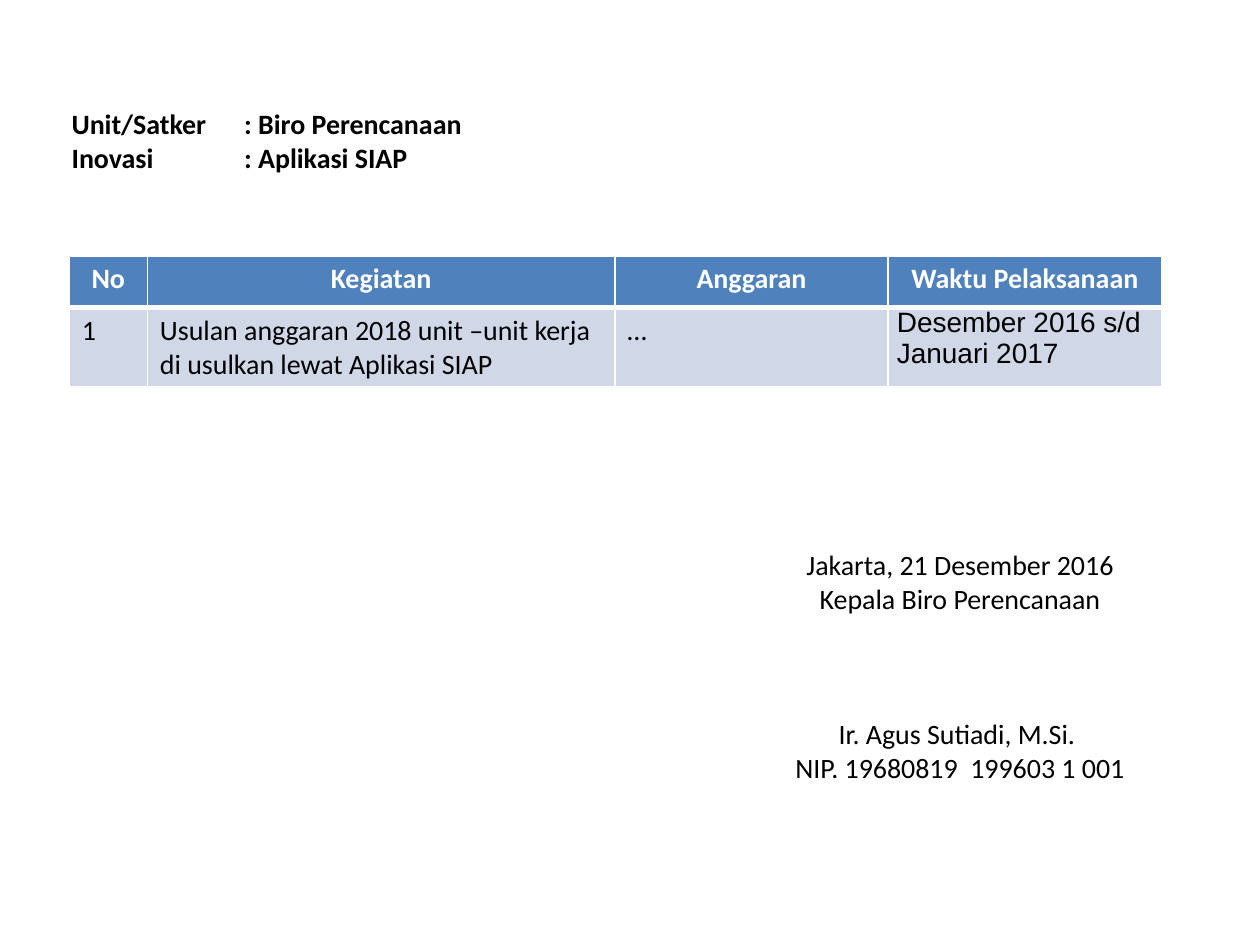
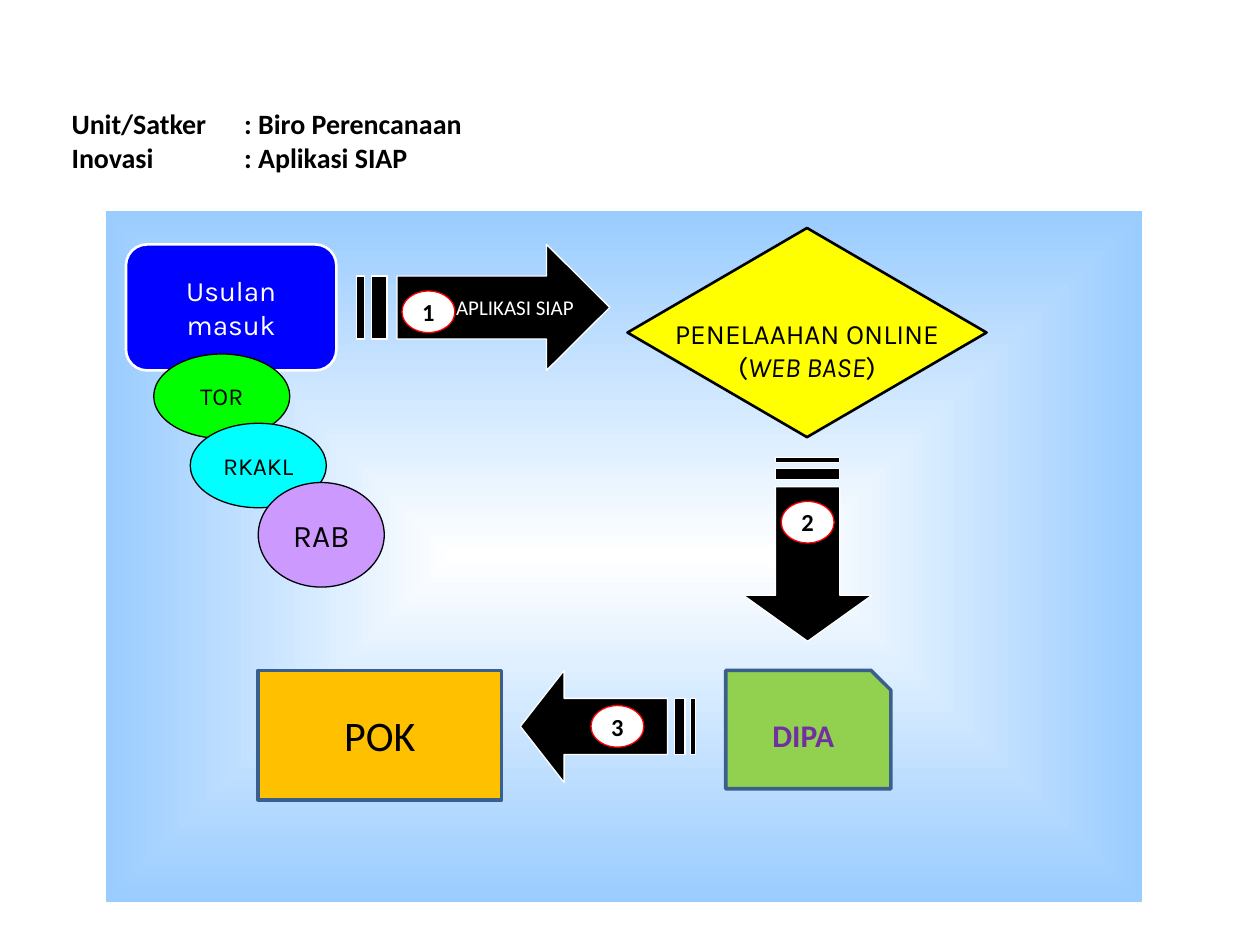
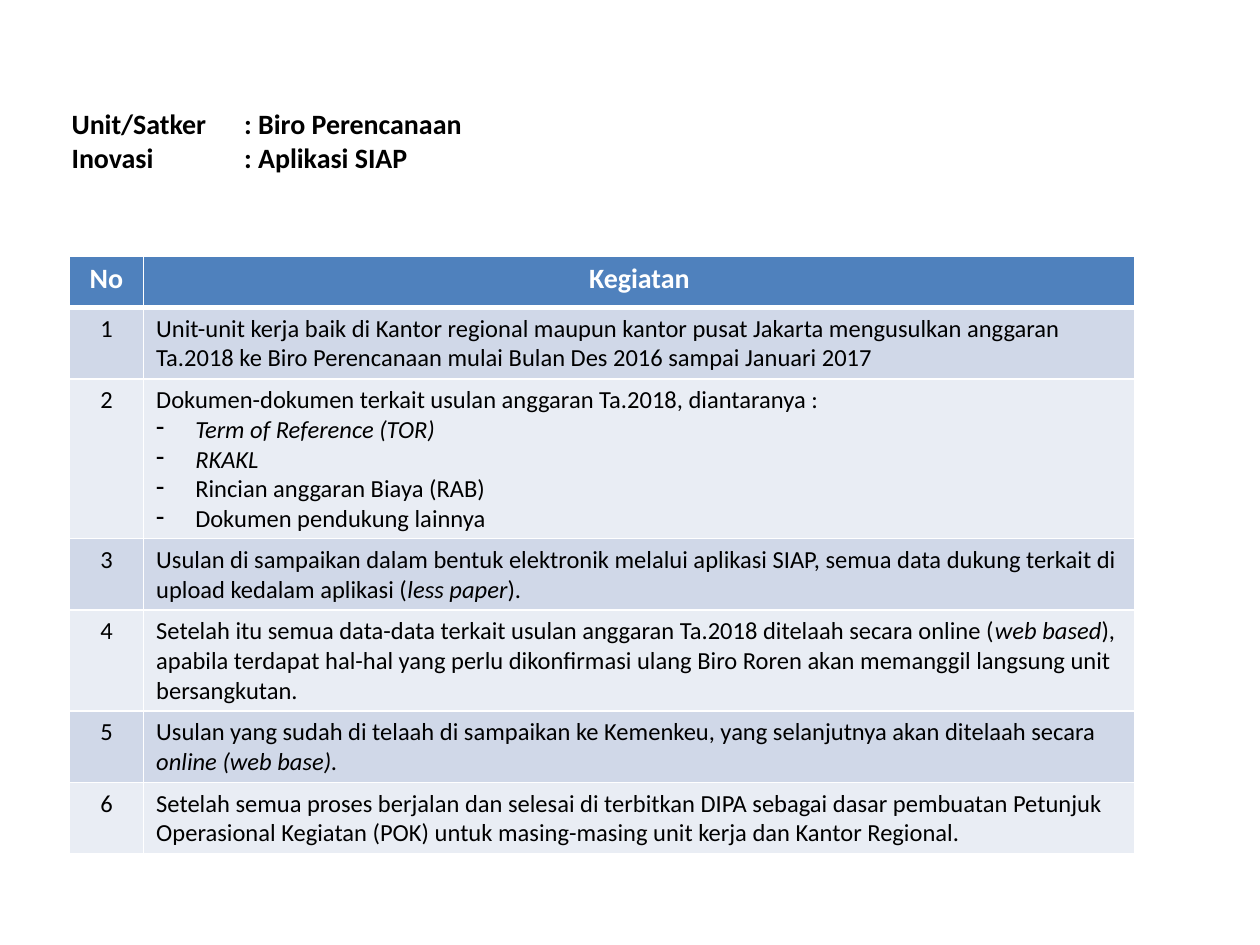
from dataclasses import dataclass, replace
from typing import NamedTuple

from lxml.etree import SubElement
from pptx import Presentation
from pptx.dml.color import RGBColor
from pptx.enum.shapes import MSO_SHAPE as Preset
from pptx.enum.text import MSO_ANCHOR as Anchor, PP_ALIGN as Align
from pptx.oxml.ns import qn
from pptx.util import Inches, Pt

CELL = Inches(0.1)  # the slide is a grid of 100 columns by 75 rows
COLUMNS, ROWS = 100, 75

BLACK, WHITE = "000000", "FFFFFF"
HEADER_BLUE, BAND_DARK, BAND_LIGHT = "4F81BD", "D0D8E8", "E9EDF4"
OUTLINE_BLUE, SKY = "3A5F8C", "99CCFF"


class Box(NamedTuple):
    col: float
    row: float
    cols: float
    rows: float

    def emu(self) -> list[int]:
        return [grid(value) for value in self]


class Phrase(NamedTuple):
    text: str
    italic: bool = False


class Para(NamedTuple):
    phrases: tuple[Phrase, ...]
    bullet: str = ""
    space_before: float = 0


@dataclass(frozen=True)
class Style:
    size: float
    color: str = BLACK
    font: str = "Calibri"
    bold: bool = False
    align: Align = Align.CENTER


@dataclass(frozen=True)
class Node:
    preset: Preset
    box: Box
    fill: str
    line: str
    weight: float
    style: Style
    paras: tuple[Para, ...]
    wrap: bool = False
    top_margin: float = 0.5


class Arrow(NamedTuple):
    box: Box
    heading: str
    badge: tuple[float, float]
    caption: str = ""


def grid(cells: float) -> int:
    return round(cells * CELL)


def rgb(hex_color: str) -> RGBColor:
    return RGBColor.from_string(hex_color)


def plain(text: str) -> Para:
    return Para((Phrase(text),))


BODY = Style(16, align=Align.LEFT)
HEADER = Style(16, WHITE, bold=True)
STEP = Style(14)
STEP_TEXT = replace(STEP, align=Align.LEFT)
KARLA = Style(14, font="Karla")
BADGE_STYLE = Style(14, bold=True)

HEADING = (("Unit/Satker", "Biro Perencanaan"), ("Inovasi", "Aplikasi SIAP"))
SIGNATURE = (
    plain("Jakarta, 21 Desember 2016"),
    plain("Kepala Biro Perencanaan"),
    Para((Phrase("Ir. Agus Sutiadi, M.Si. "),), space_before=58),
    plain("NIP. 19680819  199603 1 001"),
)

NODES = (
    Node(Preset.ROUNDED_RECTANGLE, Box(10, 19.4, 16.7, 10), "0000FF", WHITE, 1.5,
         Style(16, WHITE, "Karla"), (plain("Usulan masuk"),), wrap=True),
    Node(Preset.OVAL, Box(12.2, 28.1, 10.8, 6.7), "00FF00", BLACK, 0.75,
         KARLA, (plain("TOR"),)),
    Node(Preset.OVAL, Box(15.1, 33.6, 10.8, 6.7), "00FFFF", BLACK, 0.75,
         KARLA, (plain("RKAKL"),)),
    Node(Preset.OVAL, Box(20.5, 38.3, 10, 8.3), "CC99FF", BLACK, 0.75,
         replace(KARLA, size=18), (plain("RAB"),)),
    Node(Preset.DIAMOND, Box(49.8, 18.1, 28.5, 16.6), "FFFF00", BLACK, 1.5,
         replace(KARLA, size=16),
         (plain("PENELAAHAN ONLINE"),
          Para((Phrase("("), Phrase("WEB BASE", True), Phrase(")")))), top_margin=3.2),
    Node(Preset.SNIP_1_RECTANGLE, Box(57.6, 53.2, 13.1, 9.4), "92D050", OUTLINE_BLUE, 2,
         Style(18, "7030A0", bold=True), (plain("DIPA"),), wrap=True),
    Node(Preset.RECTANGLE, Box(20.5, 53.2, 19.3, 10.3), "FFC000", OUTLINE_BLUE, 2,
         Style(24), (plain("POK"),), wrap=True),
)

ARROWS = (
    Arrow(Box(28.3, 19.4, 20.1, 10), "right", (31.9, 23.1), "APLIKASI SIAP"),
    Arrow(Box(59, 36.3, 10.2, 14.6), "down", (62, 39.8)),
    Arrow(Box(41.3, 53.2, 13.9, 8.9), "left", (46.9, 56)),
)

# Outlines as shares of the arrow: (along its heading, across it)
ARROW_OUTLINES = (
    ((0.75, 0), (0.75, 0.25), (0.16, 0.25), (0.16, 0.75),
     (0.75, 0.75), (0.75, 1), (1, 0.5)),
    ((0.06, 0.25), (0.06, 0.75), (0.12, 0.75), (0.12, 0.25)),
    ((0, 0.25), (0, 0.75), (0.03, 0.75), (0.03, 0.25)),
)

STEPS = (
    (plain("Unit-unit kerja baik di Kantor regional maupun kantor pusat Jakarta "
           "mengusulkan anggaran Ta.2018 ke Biro Perencanaan mulai Bulan Des 2016 "
           "sampai Januari 2017"),),
    (plain("Dokumen-dokumen terkait usulan anggaran Ta.2018, diantaranya :"),
     Para((Phrase("Term of Reference (TOR)", True),), "-"),
     Para((Phrase("RKAKL", True),), "-"),
     Para((Phrase("Rincian anggaran Biaya (RAB)"),), "-"),
     Para((Phrase("Dokumen pendukung lainnya"),), "-")),
    (Para((Phrase("Usulan di sampaikan dalam bentuk elektronik melalui aplikasi SIAP, "
                  "semua data dukung terkait di upload kedalam aplikasi ("),
           Phrase("less paper", True), Phrase(")."))),),
    (Para((Phrase("Setelah itu semua data-data terkait usulan anggaran Ta.2018 "
                  "ditelaah secara online ("),
           Phrase("web based", True),
           Phrase("), apabila terdapat hal-hal yang perlu dikonfirmasi ulang Biro Roren "
                  "akan memanggil langsung unit bersangkutan."))),),
    (Para((Phrase("Usulan yang sudah di telaah di sampaikan ke Kemenkeu, yang "
                  "selanjutnya akan ditelaah secara"),
           Phrase(" online (web base).", True))),),
    (plain("Setelah semua proses berjalan dan selesai di terbitkan DIPA sebagai dasar "
           "pembuatan Petunjuk Operasional Kegiatan (POK) untuk masing-masing unit "
           "kerja dan Kantor Regional."),),
)


def add_run(paragraph, phrase: Phrase, style: Style) -> None:
    run = paragraph.add_run()
    run.text = phrase.text
    font = run.font
    font.name, font.size = style.font, Pt(style.size)
    font.bold, font.italic = style.bold, phrase.italic
    font.color.rgb = rgb(style.color)


def add_bullet(paragraph, mark: str) -> None:
    properties = paragraph._p.get_or_add_pPr()
    properties.set("marL", str(grid(3.1)))
    properties.set("indent", str(-grid(3.1)))
    SubElement(properties, qn("a:buChar"), char=mark)


def write(frame, paras: tuple[Para, ...], style: Style) -> None:
    for index, para in enumerate(paras):
        paragraph = frame.add_paragraph() if index else frame.paragraphs[0]
        paragraph.alignment = style.align
        if para.space_before:
            paragraph.space_before = Pt(para.space_before)
        if para.bullet:
            add_bullet(paragraph, para.bullet)
        for phrase in para.phrases:
            add_run(paragraph, phrase, style)


def paint(shape, fill: str, line: str, weight: float) -> None:
    shape.shadow.inherit = False
    shape.fill.solid()
    shape.fill.fore_color.rgb = rgb(fill)
    shape.line.color.rgb = rgb(line)
    shape.line.width = Pt(weight)


def add_heading(slide) -> None:
    frame = slide.shapes.add_textbox(*Box(4.7, 3.1, 90.6, 16.1).emu()).text_frame
    frame.word_wrap = True
    frame.vertical_anchor = Anchor.MIDDLE
    paragraph = frame.paragraphs[0]
    tabs = SubElement(paragraph._p.get_or_add_pPr(), qn("a:tabLst"))
    SubElement(tabs, qn("a:tab"), pos=str(grid(13.7)), algn="l")
    for index, (label, value) in enumerate(HEADING):
        if index:
            paragraph.add_line_break()
        add_run(paragraph, Phrase(f"{label}\t: {value}"), Style(16, bold=True))


def add_node(slide, node: Node) -> None:
    shape = slide.shapes.add_shape(node.preset, *node.box.emu())
    paint(shape, node.fill, node.line, node.weight)
    frame = shape.text_frame
    frame.word_wrap = node.wrap
    frame.vertical_anchor = Anchor.MIDDLE
    frame.margin_top = grid(node.top_margin)
    write(frame, node.paras, node.style)


def add_backdrop(slide) -> None:
    """Panel that fades from white in its middle to sky blue at its edges."""
    panel = slide.shapes.add_shape(Preset.RECTANGLE, *Box(8.3, 16.6, 82.5, 55.1).emu())
    paint(panel, WHITE, WHITE, 2)
    panel.fill.gradient()
    for stop, color in zip(panel.fill.gradient_stops, (WHITE, SKY)):
        stop.color.rgb = rgb(color)
    gradient = panel._element.spPr.find(qn("a:gradFill"))
    linear = gradient.find(qn("a:lin"))
    fade = SubElement(gradient, qn("a:path"), path="shape")
    SubElement(fade, qn("a:fillToRect"), l="50000", t="50000", r="50000", b="50000")
    gradient.replace(linear, fade)


def arrow_point(arrow: Arrow, along: float, across: float) -> tuple[int, int]:
    x, y = {
        "right": (along, across),
        "down": (across, along),
        "left": (1 - along, across),
    }[arrow.heading]
    box = arrow.box
    return grid(box.col + x * box.cols), grid(box.row + y * box.rows)


def add_striped_arrow(slide, arrow: Arrow) -> None:
    outlines = [[arrow_point(arrow, *share) for share in outline]
                for outline in ARROW_OUTLINES]
    builder = slide.shapes.build_freeform(*outlines[0][0])
    for index, (start, *rest) in enumerate(outlines):
        if index:
            builder.move_to(*start)
        builder.add_line_segments(rest, close=True)
    shape = builder.convert_to_shape()
    paint(shape, BLACK, WHITE, 0.75)
    if arrow.caption:
        frame = shape.text_frame
        frame.word_wrap = True
        frame.vertical_anchor = Anchor.MIDDLE
        frame.margin_left, frame.margin_right = grid(7.9), 0
        write(frame, (plain(arrow.caption),), Style(12, WHITE, align=Align.LEFT))


def set_borders(cell, bottom_weight: float) -> None:
    properties = cell._tc.get_or_add_tcPr()
    for index, side in enumerate(("lnL", "lnR", "lnT", "lnB")):
        weight = bottom_weight if side == "lnB" else 1
        line = SubElement(properties, qn(f"a:{side}"), w=str(Pt(weight)))
        SubElement(SubElement(line, qn("a:solidFill")), qn("a:srgbClr"), val=WHITE)
        properties.insert(index, line)


def fill_cell(cell, paras: tuple[Para, ...], style: Style, fill: str,
              bottom_weight: float = 1) -> None:
    cell.fill.solid()
    cell.fill.fore_color.rgb = rgb(fill)
    set_borders(cell, bottom_weight)
    write(cell.text_frame, paras, style)


def add_activity_table(slide, widths: tuple[float, ...], titles: tuple[str, ...],
                       records: list[tuple], styles: tuple[Style, ...]):
    row_height = 4.1
    box = Box(5.5, 20.3, sum(widths), row_height * (len(records) + 1))
    table = slide.shapes.add_table(len(records) + 1, len(widths), *box.emu()).table
    table.horz_banding = False
    for column, width in zip(table.columns, widths):
        column.width = grid(width)
    for column, title in enumerate(titles):
        fill_cell(table.cell(0, column), (plain(title),), HEADER, HEADER_BLUE, 3)
    for row, record in enumerate(records, start=1):
        band = BAND_DARK if row % 2 else BAND_LIGHT
        for column, (paras, style) in enumerate(zip(record, styles)):
            fill_cell(table.cell(row, column), paras, style, band)
    return table


def build_plan(slide) -> None:
    record = ("1", "Usulan anggaran 2018 unit –unit kerja di usulkan lewat Aplikasi SIAP",
              "…", "Desember 2016 s/d Januari 2017")
    table = add_activity_table(
        slide, (6.2, 37.1, 21.7, 21.7),
        ("No", "Kegiatan", "Anggaran", "Waktu Pelaksanaan"),
        [tuple((plain(text),) for text in record)],
        (BODY, BODY, BODY, replace(BODY, font="Arial")))
    schedule = table.cell(1, 3)
    schedule.margin_left = schedule.margin_right = grid(0.7)
    schedule.margin_top = schedule.margin_bottom = 0

    signature = slide.shapes.add_textbox(*Box(60.2, 43, 32, 19.9).emu()).text_frame
    signature.word_wrap = True
    write(signature, SIGNATURE, Style(16))


def build_flow(slide) -> None:
    add_backdrop(slide)
    for node in NODES:
        add_node(slide, node)
    for number, arrow in enumerate(ARROWS, start=1):
        add_striped_arrow(slide, arrow)
        add_node(slide, Node(Preset.OVAL, Box(*arrow.badge, 4.2, 3.3), WHITE, "FF0000",
                             0.75, BADGE_STYLE, (plain(str(number)),)))


def build_steps(slide) -> None:
    records = [((plain(str(number)),), paras)
               for number, paras in enumerate(STEPS, start=1)]
    add_activity_table(slide, (5.9, 78.7), ("No", "Kegiatan"), records,
                       (STEP, STEP_TEXT))


def main() -> None:
    deck = Presentation()
    deck.slide_width, deck.slide_height = grid(COLUMNS), grid(ROWS)
    for build in (build_plan, build_flow, build_steps):
        slide = deck.slides.add_slide(deck.slide_layouts[6])
        add_heading(slide)
        build(slide)
    deck.save("out.pptx")


if __name__ == "__main__":
    main()
